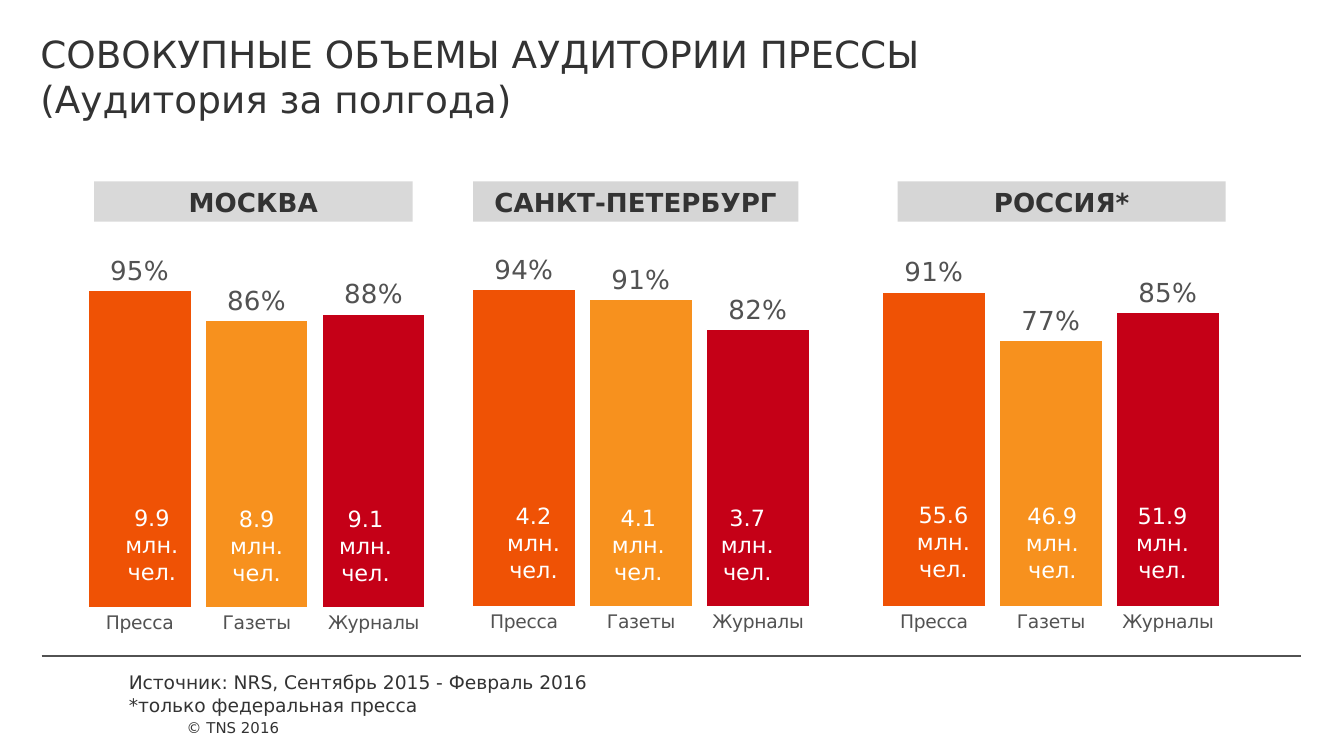
import dataclasses

import pptx
import pptx.chart.data
import pptx.dml.color
import pptx.enum.chart
import pptx.enum.shapes
import pptx.enum.text
import pptx.oxml
import pptx.oxml.ns
import pptx.util

PX = 9144  # EMU per px, 100 px to the inch
ALIGN = pptx.enum.text.PP_ALIGN
ANCHOR = pptx.enum.text.MSO_ANCHOR
FIT = pptx.enum.text.MSO_AUTO_SIZE


@dataclasses.dataclass(frozen=True)
class Theme:
    font: str = "DejaVu Sans"
    text: str = "333333"
    muted: str = "525252"
    white: str = "FFFFFF"
    bars: tuple = ("EF5205", "F7911E", "C50017")
    title_size: int = 20
    header_size: int = 14
    chart_size: int = 16
    label_size: int = 14
    audience_size: int = 12
    small_size: int = 10
    copyright_size: int = 8


THEME = Theme()
CATEGORIES = ("Пресса", "Газеты", "Журналы")


@dataclasses.dataclass(frozen=True)
class Region:
    name: str
    header: tuple  # left, width
    header_fill: str
    chart: tuple  # left, top
    plot_height: float  # share of the chart height
    overlap: int
    shares: tuple
    audience: tuple  # millions of people
    audience_left: tuple


REGIONS = (
    Region("МОСКВА", (70, 237), "D9D9D9", (55, 190), 0.86, -57,
           (0.95, 0.86, 0.88), ("9.9", "8.9", "9.1"), (76, 154, 235)),
    Region("САНКТ-ПЕТЕРБУРГ", (352, 242), "D6D6D6", (341, 189), 0.87, -81,
           (0.94, 0.91, 0.82), ("4.2", "4.1", "3.7"), (360, 438, 519)),
    Region("РОССИЯ*", (668, 244), "D6D6D6", (646, 189), 0.89, -47,
           (0.91, 0.77, 0.85), ("55.6", "46.9", "51.9"), (665, 746, 828)),
)


def px(*values):
    return [pptx.util.Emu(v * PX) for v in values]


def rgb(color):
    return pptx.dml.color.RGBColor.from_string(color)


def style(font, size, color, bold=False):
    font.name = THEME.font
    font.size = pptx.util.Pt(size)
    font.color.rgb = rgb(color)
    font.bold = bold


def set_frame(tf, anchor, margins, fit=FIT.NONE, wrap=True):
    tf.word_wrap = wrap
    tf.auto_size = fit
    tf.vertical_anchor = anchor
    (tf.margin_left, tf.margin_top,
     tf.margin_right, tf.margin_bottom) = px(*margins)


def write(p, text, size, color, align=ALIGN.LEFT, bold=False):
    p.alignment = align
    r = p.add_run()
    r.text = text
    style(r.font, size, color, bold)


def add_title(s, lines):
    sp = s.shapes.title
    sp.left, sp.top, sp.width, sp.height = px(0, 0, 1000, 89)
    set_frame(sp.text_frame, ANCHOR.TOP, (30, 23, 30, 0))
    p = sp.text_frame.paragraphs[0]
    for i, line in enumerate(lines):
        if i:
            p.add_line_break()
        write(p, line, THEME.title_size, THEME.text)


def add_text(s, box, lines, size, color, align=ALIGN.LEFT,
             anchor=ANCHOR.TOP, fit=FIT.NONE, wrap=True):
    tf = s.shapes.add_textbox(*px(*box)).text_frame
    set_frame(tf, anchor, (10, 5, 10, 5), fit, wrap)
    for i, line in enumerate(lines):
        p = tf.add_paragraph() if i else tf.paragraphs[0]
        write(p, line, size, color, align)


def add_header(s, region):
    left, width = region.header
    sp = s.shapes.add_shape(pptx.enum.shapes.MSO_SHAPE.RECTANGLE,
                            *px(left, 135, width, 30))
    sp.shadow.inherit = False
    sp.fill.solid()
    sp.fill.fore_color.rgb = rgb(region.header_fill)
    sp.line.fill.background()
    set_frame(sp.text_frame, ANCHOR.MIDDLE, (3, 3, 3, 3))
    write(sp.text_frame.paragraphs[0], region.name, THEME.header_size,
          THEME.text, ALIGN.CENTER, bold=True)


def set_plot_area(chart, x, y, w, h):
    ns = pptx.oxml.ns
    plot_area = chart.plots[0]._element.getparent()
    for old in plot_area.findall(ns.qn("c:layout")):
        plot_area.remove(old)
    values = "".join(f'<c:{tag} val="{value:.2f}"/>' for tag, value in
                     zip("xywh", (x, y, w, h)))
    plot_area.insert(0, pptx.oxml.parse_xml(
        f'<c:layout {ns.nsdecls("c")}><c:manualLayout>'
        '<c:layoutTarget val="inner"/><c:xMode val="edge"/>'
        f'<c:yMode val="edge"/>{values}</c:manualLayout></c:layout>'))


def add_share_chart(s, region):
    enums = pptx.enum.chart
    data = pptx.chart.data.CategoryChartData(number_format="0%")
    data.categories = CATEGORIES
    data.add_series("Series 1", region.shares)
    chart = s.shapes.add_chart(enums.XL_CHART_TYPE.COLUMN_CLUSTERED,
                               *px(*region.chart, 272, 288), data).chart
    chart.has_legend = False
    chart.has_title = False
    style(chart.font, THEME.chart_size, THEME.muted)

    # Axes
    axis = chart.category_axis
    axis.major_tick_mark = enums.XL_TICK_MARK.NONE
    axis.format.line.fill.background()
    style(axis.tick_labels.font, THEME.small_size, THEME.muted)
    axis = chart.value_axis
    axis.minimum_scale, axis.maximum_scale = 0, 1
    axis.has_major_gridlines = False
    axis.visible = False

    # Bars and their labels
    plot = chart.plots[0]
    plot.vary_by_categories = False
    plot.gap_width = 15
    plot.overlap = region.overlap
    series = plot.series[0]
    for i, color in enumerate(THEME.bars):
        fill = series.points[i].format.fill
        fill.solid()
        fill.fore_color.rgb = rgb(color)
    labels = series.data_labels
    labels.show_value = True
    labels.number_format = "0%"
    labels.number_format_is_linked = False
    labels.position = enums.XL_LABEL_POSITION.OUTSIDE_END
    style(labels.font, THEME.label_size, THEME.muted)
    set_plot_area(chart, 0.02, 0.91 - region.plot_height, 0.96,
                  region.plot_height)


def add_audience(s, region):
    top = region.chart[1] + 180
    for i, (count, left) in enumerate(zip(region.audience,
                                          region.audience_left)):
        add_text(s, (left, top + (i > 0) - (region.audience_left[0] > 600),
                     74, 71), [f"{count} млн. чел."],
                 THEME.audience_size, THEME.white, ALIGN.CENTER,
                 fit=FIT.SHAPE_TO_FIT_TEXT)


def add_rule(s):
    line = s.shapes.add_connector(pptx.enum.shapes.MSO_CONNECTOR.STRAIGHT,
                                  *px(31, 488, 968, 488))
    line.line.color.rgb = rgb(THEME.muted)
    line.line.width = pptx.util.Pt(0.75)
    line._element.spPr.append(pptx.oxml.parse_xml(
        f'<a:effectLst {pptx.oxml.ns.nsdecls("a")}/>'))


def main():
    prs = pptx.Presentation()
    prs.slide_width, = px(1000)
    prs.slide_height = prs.slide_width * 9 // 16
    s = prs.slides.add_slide(prs.slide_layouts.get_by_name("Title Only"))
    add_title(s, ("СОВОКУПНЫЕ ОБЪЕМЫ АУДИТОРИИ ПРЕССЫ",
                  "(Аудитория за полгода)"))

    # One column of header, chart and audience figures per region
    for region in REGIONS:
        add_header(s, region)
        add_share_chart(s, region)
        add_audience(s, region)

    # Footer
    add_rule(s)
    add_text(s, (86, 496, 608, 40),
             ("Источник: NRS, Сентябрь 2015 - Февраль 2016",
              "*только федеральная пресса"),
             THEME.small_size, THEME.text, anchor=ANCHOR.MIDDLE)
    add_text(s, (129, 529, 91, 24), ["© TNS 2016"], THEME.copyright_size,
             THEME.text, anchor=ANCHOR.BOTTOM, fit=FIT.SHAPE_TO_FIT_TEXT,
             wrap=False)
    prs.save("out.pptx")


if __name__ == "__main__":
    main()
